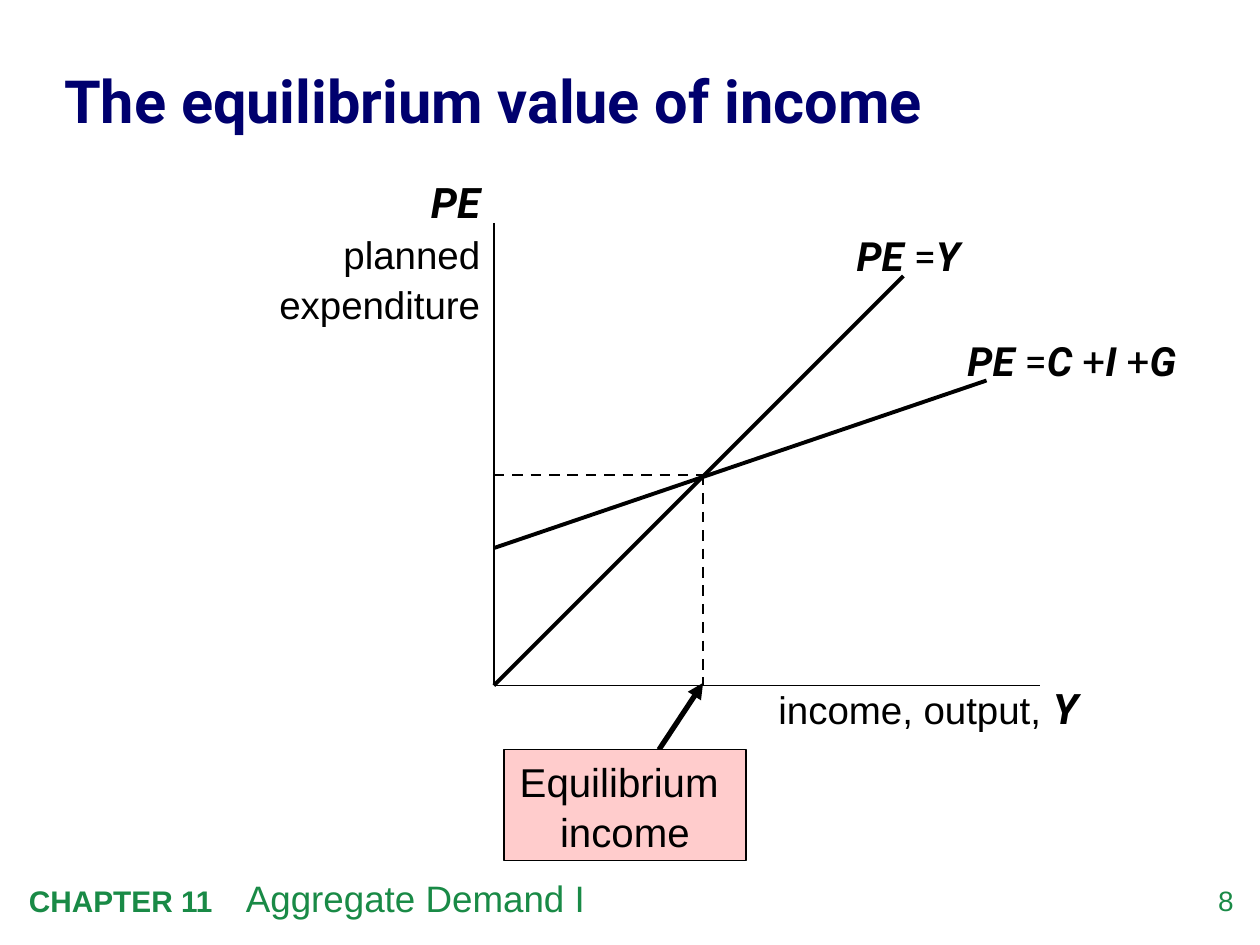
from dataclasses import dataclass

import pptx
import pptx.dml.color
import pptx.enum.dml
import pptx.enum.shapes
import pptx.enum.text
import pptx.oxml
import pptx.oxml.ns
import pptx.util
from pptx.util import Inches

COLORS = {"black": "000000", "navy": "00006E", "green": "198A46", "pink": "FFCCCC"}
ALIGN = pptx.enum.text.PP_ALIGN
ANCHOR = pptx.enum.text.MSO_ANCHOR

# Key points of the diagram, in inches
ORIGIN_X, ORIGIN_Y = 3.92, 5.44
EQUILIBRIUM_X, EQUILIBRIUM_Y = 5.58, 3.77


@dataclass
class Run:
    text: str
    size: float
    font: str = "Arial"
    color: str = "black"
    bold: bool = False
    italic: bool = False


@dataclass
class Label:
    box: tuple[float, float, float, float]
    paragraphs: list[list[Run]]
    align: ALIGN = ALIGN.LEFT
    line_spacing: float = 1.05
    space_before: float = 0
    margins: tuple[float, float] = (0.1, 0.05)


@dataclass
class Line:
    start: tuple[float, float]
    end: tuple[float, float]
    width: float
    dashed: bool = False
    arrow: bool = False


def rgb(name: str) -> pptx.dml.color.RGBColor:
    return pptx.dml.color.RGBColor.from_string(COLORS[name])


def variable(text: str, size: float = 23) -> Run:
    """Bold italic run for an economic variable."""
    return Run(text, size, "Roboto", bold=True, italic=True)


def operator(text: str) -> Run:
    return Run(text, 23, "Roboto")


LINES = [
    Line((ORIGIN_X, 1.77), (ORIGIN_X, ORIGIN_Y), 1),
    Line((ORIGIN_X, ORIGIN_Y), (8.25, ORIGIN_Y), 1),
    Line((ORIGIN_X, ORIGIN_Y), (7.17, 2.19), 2.25),
    Line((ORIGIN_X, 4.35), (7.83, 3.02), 2.25),
    Line((EQUILIBRIUM_X, EQUILIBRIUM_Y), (EQUILIBRIUM_X, ORIGIN_Y), 1.5, dashed=True),
    Line((ORIGIN_X, EQUILIBRIUM_Y), (EQUILIBRIUM_X, EQUILIBRIUM_Y), 1.5, dashed=True),
    Line((5.23, 5.95), (EQUILIBRIUM_X, 5.42), 3, arrow=True),
]

LABELS = [
    Label((9.24, 7.01, 0.55, 0.32), [[Run("8", 16, color="green")]],
          ALIGN.RIGHT, line_spacing=1, margins=(0, 0)),
    Label((0.13, 6.9, 8.18, 0.45),
          [[Run("CHAPTER 11    ", 17, color="green", bold=True),
            Run("Aggregate Demand I", 21, color="green")]], line_spacing=1),
    Label((6.08, 5.35, 2.83, 0.5),
          [[Run("income, output,", 22), Run(" ", 24), variable("Y", 24)]]),
    Label((6.7, 1.77, 1.21, 0.49), [[variable("PE"), operator(" ="), variable("Y")]]),
    Label((7.58, 2.6, 2.25, 0.48),
          [[variable("PE"), operator(" ="), variable("C "), operator("+"),
            variable("I "), operator("+"), variable("G")]]),
    Label((1.65, 1.33, 2.26, 1.28),
          [[variable("PE", 24)], [Run("planned", 22)], [Run("expenditure", 22)]],
          ALIGN.RIGHT, space_before=1),
]

TITLE = Label((0.51, 0.26, 9.02, 1.03),
              [[Run("The equilibrium value of income", 34, "Roboto", "navy", True)]],
              margins=(0, 0))
CALLOUT = Label((4, 5.95, 1.92, 0.88), [[Run("Equilibrium \nincome", 23)]], ALIGN.CENTER)


def add_run(paragraph, run: Run) -> None:
    for index, text in enumerate(run.text.split("\n")):
        if index:
            paragraph.add_line_break()
        piece = paragraph.add_run()
        piece.text = text
        font = piece.font
        font.name, font.size = run.font, pptx.util.Pt(run.size)
        font.bold, font.italic = run.bold, run.italic
        font.color.rgb = rgb(run.color)


def write_label(shape, label: Label, anchor: ANCHOR) -> None:
    frame = shape.text_frame
    frame.word_wrap = True
    frame.auto_size = pptx.enum.text.MSO_AUTO_SIZE.NONE
    frame.vertical_anchor = anchor
    frame.margin_left = frame.margin_right = Inches(label.margins[0])
    frame.margin_top = frame.margin_bottom = Inches(label.margins[1])
    for index, runs in enumerate(label.paragraphs):
        paragraph = frame.add_paragraph() if index else frame.paragraphs[0]
        paragraph.alignment = label.align
        paragraph.line_spacing = label.line_spacing
        paragraph.space_before = pptx.util.Pt(label.space_before)
        for run in runs:
            add_run(paragraph, run)


def add_title(slide, label: Label) -> None:
    title = slide.shapes.title
    title.left, title.top, title.width, title.height = map(Inches, label.box)
    write_label(title, label, ANCHOR.MIDDLE)


def add_label(slide, label: Label) -> None:
    shape = slide.shapes.add_textbox(*map(Inches, label.box))
    write_label(shape, label, ANCHOR.TOP)


def add_callout(slide, label: Label) -> None:
    shape = slide.shapes.add_shape(
        pptx.enum.shapes.MSO_SHAPE.RECTANGLE, *map(Inches, label.box))
    shape.shadow.inherit = False
    shape.fill.solid()
    shape.fill.fore_color.rgb = rgb("pink")
    shape.line.color.rgb = rgb("black")
    shape.line.width = pptx.util.Pt(0.75)
    write_label(shape, label, ANCHOR.MIDDLE)


def add_line(slide, line: Line) -> None:
    connector = slide.shapes.add_connector(
        pptx.enum.shapes.MSO_CONNECTOR.STRAIGHT, *map(Inches, line.start + line.end))
    connector.line.color.rgb = rgb("black")
    connector.line.width = pptx.util.Pt(line.width)
    if line.dashed:
        connector.line.dash_style = pptx.enum.dml.MSO_LINE.DASH
    properties = connector._element.spPr
    if line.arrow:
        tail = pptx.oxml.parse_xml(
            f'<a:tailEnd {pptx.oxml.ns.nsdecls("a")} type="triangle"/>')
        connector.line._get_or_add_ln().append(tail)
    properties.append(
        pptx.oxml.parse_xml(f'<a:effectLst {pptx.oxml.ns.nsdecls("a")}/>'))


def main() -> None:
    presentation = pptx.Presentation()
    presentation.slide_width, presentation.slide_height = Inches(10), Inches(7.5)
    slide = presentation.slides.add_slide(presentation.slide_layouts[5])
    add_title(slide, TITLE)
    for line in LINES:
        add_line(slide, line)
    add_callout(slide, CALLOUT)
    for label in LABELS:
        add_label(slide, label)
    presentation.save("out.pptx")


if __name__ == "__main__":
    main()
